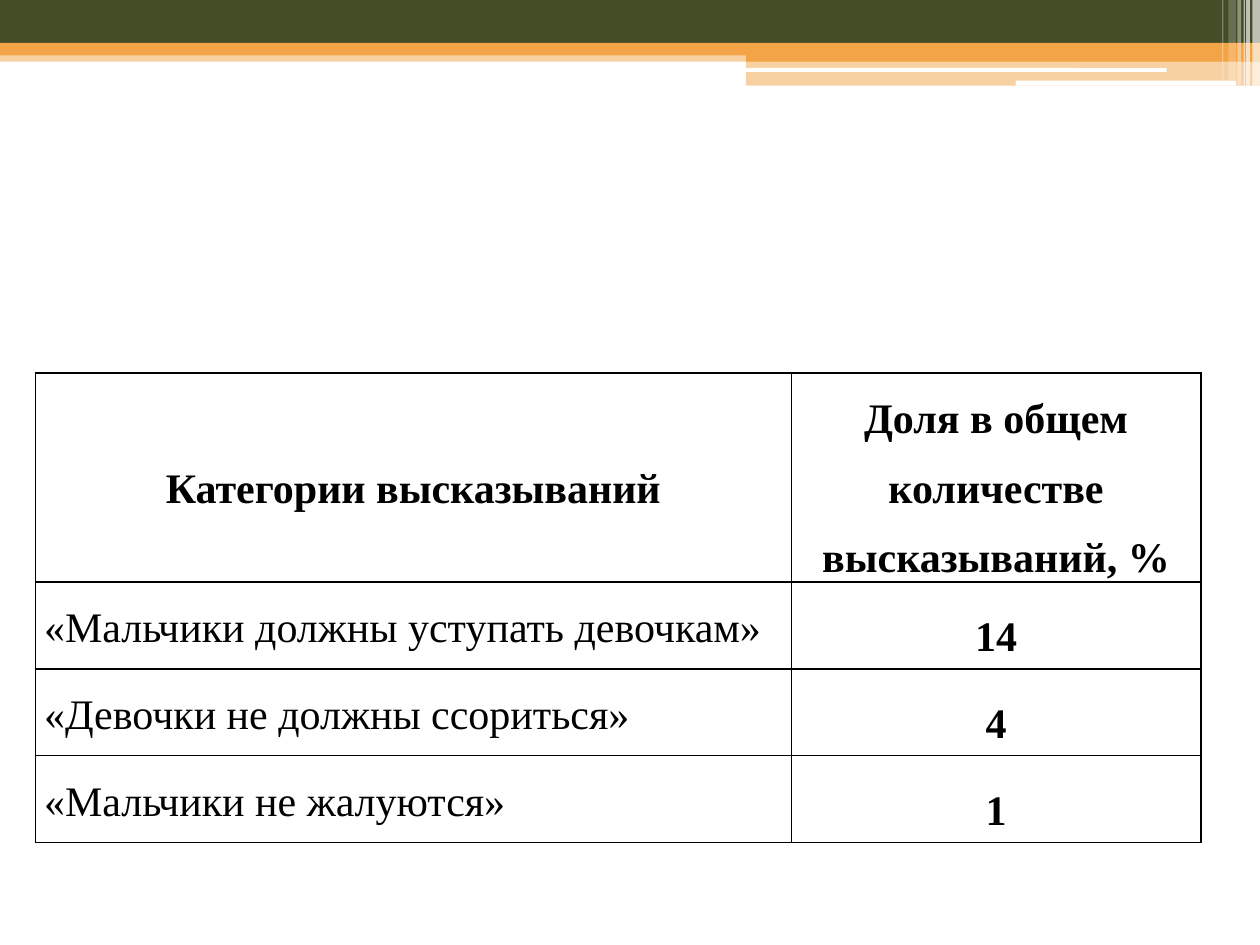
from dataclasses import dataclass

from lxml.etree import SubElement
from pptx import Presentation
from pptx.dml.color import RGBColor
from pptx.enum.shapes import MSO_SHAPE
from pptx.enum.text import MSO_ANCHOR, PP_ALIGN
from pptx.oxml.ns import qn
from pptx.util import Inches, Pt


@dataclass(frozen=True)
class Theme:
    green: str = "444D26"
    orange: str = "F3A447"
    white: str = "FFFFFF"
    black: str = "000000"
    font: str = "Times New Roman"
    text_size: int = 24
    border_width: int = 1


THEME = Theme()

HEADERS = ["Категории высказываний", "Доля в общем количестве высказываний, %"]
STATEMENTS = [
    ("«Мальчики должны уступать девочкам»", "14"),
    ("«Девочки не должны ссориться»", "4"),
    ("«Мальчики не жалуются»", "1"),
]

# left, top, width, height in inches, colour, opacity in percent
BANDS = [
    (0, 0.4, 10, 0.09, THEME.orange, 50),
    (0, 0, 10, 0.34, THEME.green, 100),
    (0, 0.34, 10, 0.1, THEME.orange, 100),
    (5.92, 0.39, 4.08, 0.1, THEME.orange, 100),
    (5.92, 0.48, 4.08, 0.2, THEME.orange, 50),
]
WHITE_BARS = [
    (5.91, 0.54, 3.35, 0.03, THEME.white, 100),
    (8.06, 0.64, 1.75, 0.04, THEME.white, 100),
]
# left, width, height in inches, opacity in percent
STRIPES = [
    (9.94, 0.06, 0.68, 65),
    (9.89, 0.03, 0.68, 65),
    (9.87, 0.01, 0.68, 60),
    (9.82, 0.03, 0.68, 40),
    (9.75, 0.06, 0.64, 20),
    (9.7, 0.01, 0.64, 30),
]

TABLE_LEFT, TABLE_TOP = 0.28, 2.96
COLUMN_WIDTHS = [6, 3.25]
HEADER_HEIGHT, ROW_HEIGHT = 1.39, 0.69
CELL_FORMAT = {
    "margin_left": Inches(0.07),
    "margin_right": Inches(0.07),
    "margin_top": 0,
    "margin_bottom": 0,
}


def add_block(slide, left, top, width, height, color, opacity, preset=MSO_SHAPE.RECTANGLE):
    shape = slide.shapes.add_shape(preset, *map(Inches, (left, top, width, height)))
    shape.shadow.inherit = False
    shape.line.fill.background()
    shape.fill.solid()
    shape.fill.fore_color.rgb = RGBColor.from_string(color)
    if opacity < 100:
        color_element = shape.fill._xPr.find(qn("a:solidFill"))[0]
        SubElement(color_element, qn("a:alpha"), val=str(opacity * 1000))


def add_borders(cell):
    properties = cell._tc.get_or_add_tcPr()
    for side in ("lnL", "lnR", "lnT", "lnB"):
        line = SubElement(properties, qn(f"a:{side}"), w=str(Pt(THEME.border_width)))
        fill = SubElement(line, qn("a:solidFill"))
        SubElement(fill, qn("a:srgbClr"), val=THEME.black)


def fill_cell(cell, text, bold, alignment, anchor):
    add_borders(cell)
    cell.fill.background()
    for name, value in {**CELL_FORMAT, "vertical_anchor": anchor}.items():
        setattr(cell, name, value)
    paragraph = cell.text_frame.paragraphs[0]
    paragraph.alignment = alignment
    paragraph.line_spacing = 1.5
    run = paragraph.add_run()
    run.text = text
    font_format = {"name": THEME.font, "size": Pt(THEME.text_size), "bold": bold}
    for name, value in font_format.items():
        setattr(run.font, name, value)
    run.font.color.rgb = RGBColor.from_string(THEME.black)


def add_statement_table(slide):
    rows = [HEADERS, *STATEMENTS]
    heights = [HEADER_HEIGHT] + [ROW_HEIGHT] * len(STATEMENTS)
    frame = slide.shapes.add_table(
        len(rows), len(COLUMN_WIDTHS), Inches(TABLE_LEFT), Inches(TABLE_TOP),
        Inches(sum(COLUMN_WIDTHS)), Inches(sum(heights)))
    table = frame.table
    table.first_row = table.horz_banding = False
    for column, width in zip(table.columns, COLUMN_WIDTHS):
        column.width = Inches(width)
    for row_index, (texts, height) in enumerate(zip(rows, heights)):
        table.rows[row_index].height = Inches(height)
        for column_index, text in enumerate(texts):
            is_statement = row_index > 0 and column_index == 0
            fill_cell(
                table.cell(row_index, column_index), text, not is_statement,
                PP_ALIGN.JUSTIFY if is_statement else PP_ALIGN.CENTER,
                MSO_ANCHOR.TOP if is_statement else MSO_ANCHOR.MIDDLE)


def main():
    presentation = Presentation()
    presentation.slide_width, presentation.slide_height = Inches(10), Inches(7.5)
    slide = presentation.slides.add_slide(presentation.slide_layouts.get_by_name("Blank"))
    for band in BANDS:
        add_block(slide, *band)
    for bar in WHITE_BARS:
        add_block(slide, *bar, preset=MSO_SHAPE.ROUNDED_RECTANGLE)
    for left, width, height, opacity in STRIPES:
        add_block(slide, left, 0, width, height, THEME.white, opacity)
    add_statement_table(slide)
    presentation.save("out.pptx")


if __name__ == "__main__":
    main()
